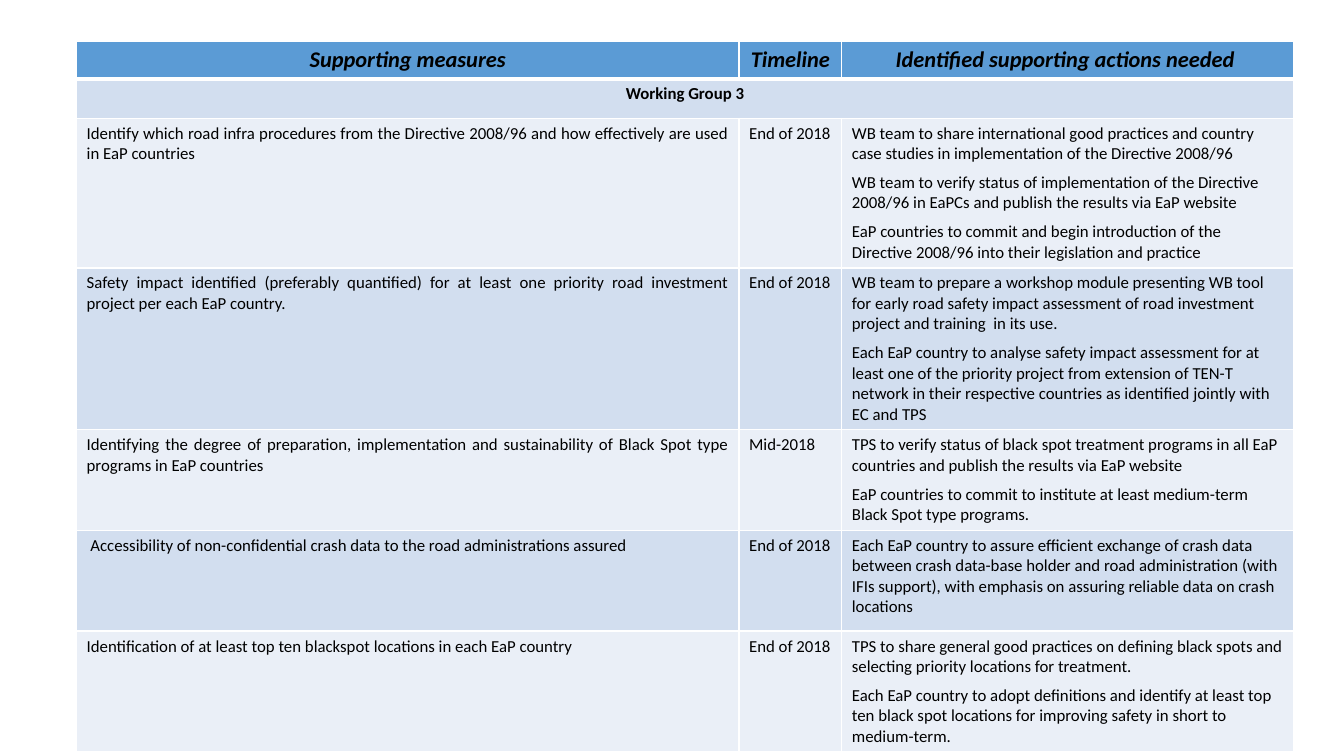
from lxml.etree import SubElement
from pptx import Presentation
from pptx.dml.color import RGBColor
from pptx.enum.text import PP_ALIGN
from pptx.oxml.ns import qn
from pptx.util import Inches, Pt

BLACK = RGBColor(0x00, 0x00, 0x00)
WHITE = RGBColor(0xFF, 0xFF, 0xFF)
BLUE = RGBColor(0x5B, 0x9B, 0xD5)
MID = RGBColor(0xD2, 0xDE, 0xEF)
PALE = RGBColor(0xEA, 0xEF, 0xF7)

LEFT, MID_ALIGN, FULL = PP_ALIGN.LEFT, PP_ALIGN.CENTER, PP_ALIGN.JUSTIFY

BASE = {"name": "Calibri", "size": Pt(12), "bold": False, "italic": False}
HEAD = {**BASE, "size": Pt(16), "bold": True, "italic": True}
GROUP = {**BASE, "bold": True}

WIDTHS = [6.57, 1.02, 4.48]
HEIGHTS = [0.36, 0.39, 1.44, 1.36, 0.97, 1, 1.2]
TITLES = ["Supporting measures", "Timeline", "Identified supporting actions needed "]

# Each row: measure, its alignment, timeline, actions
ROWS = [
    ("Identify which road infra procedures from the Directive 2008/96 and how "
     "effectively are used in EaP countries", FULL, "End of 2018", [
         "WB team to share international good practices and country case studies "
         "in implementation of the Directive 2008/96",
         "WB team to verify status of implementation of the Directive 2008/96 in "
         "EaPCs and publish the results via EaP website",
         "EaP countries to commit and begin introduction of the Directive 2008/96 "
         "into their legislation and practice"]),
    ("Safety impact identified (preferably quantified) for at least one priority "
     "road investment project per each EaP country.", FULL, "End of 2018", [
         "WB team to prepare a workshop module presenting WB tool for early road "
         "safety impact assessment of road investment project and training  in its use.",
         "Each EaP country to analyse safety impact assessment for at least one of "
         "the priority project from extension of TEN-T network in their respective "
         "countries as identified jointly with EC and TPS"]),
    ("Identifying the degree of preparation, implementation and sustainability of "
     "Black Spot type programs in EaP countries", FULL, "Mid-2018", [
         "TPS to verify status of black spot treatment programs in all EaP "
         "countries and publish the results via EaP website",
         "EaP countries to commit to institute at least medium-term Black Spot "
         "type programs."]),
    (" Accessibility of non-confidential crash data to the road administrations "
     "assured", FULL, "End of 2018", [
         "Each EaP country to assure efficient exchange of crash data between "
         "crash data-base holder and road administration (with IFIs support), "
         "with emphasis on assuring reliable data on crash locations"]),
    ("Identification of at least top ten blackspot locations in each EaP country",
     LEFT, "End of 2018", [
         "TPS to share general good practices on defining black spots and "
         "selecting priority locations for treatment.",
         "Each EaP country to adopt definitions and identify at least top ten "
         "black spot locations for improving safety in short to medium-term."]),
]


class Deck:
    """Holds the style and the current slide."""

    def __init__(self):
        self.show = Presentation()
        self.show.slide_width = Inches(13.33)
        self.show.slide_height = Inches(7.5)
        self.slide = self.show.slides.add_slide(self.show.slide_layouts[6])

    def table(self, left, top, widths, heights):
        frame = self.slide.shapes.add_table(
            len(heights), len(widths), Inches(left), Inches(top),
            Inches(sum(widths)), Inches(sum(heights)))
        grid = frame.table
        grid.first_row = grid.horz_banding = False
        for col, width in zip(grid.columns, widths):
            col.width = Inches(width)
        for row, height in zip(grid.rows, heights):
            row.height = Inches(height)
        return grid

    def cell(self, cell, fill, lines=(), align=LEFT, style=BASE, after=0, base=1):
        self.edges(cell, base)
        cell.fill.solid()
        cell.fill.fore_color.rgb = fill
        frame = cell.text_frame
        for num, line in enumerate(lines):
            para = frame.add_paragraph() if num else frame.paragraphs[0]
            para.alignment = align
            para.space_after = Pt(after)
            run = para.add_run()
            run.text = line
            for key, value in style.items():
                setattr(run.font, key, value)
            run.font.color.rgb = BLACK

    def edges(self, cell, base):
        props = cell._tc.get_or_add_tcPr()
        for side, width in zip("LRTB", (1, 1, 1, base)):
            line = SubElement(props, qn(f"a:ln{side}"), w=str(Pt(width)))
            fill = SubElement(line, qn("a:solidFill"))
            SubElement(fill, qn("a:srgbClr"), val=str(WHITE))

    def save(self):
        self.show.save("out.pptx")


def main():
    deck = Deck()
    grid = deck.table(0.76, 0.41, WIDTHS, HEIGHTS)

    # Header row
    for col, title in enumerate(TITLES):
        deck.cell(grid.cell(0, col), BLUE, [title], MID_ALIGN, HEAD, base=3)

    # Group row across all columns
    grid.cell(1, 0).merge(grid.cell(1, 2))
    for col, lines in enumerate((["Working Group 3"], [], [])):
        deck.cell(grid.cell(1, col), MID, lines, MID_ALIGN, GROUP)

    # Measures in alternating bands
    for row, (goal, align, due, acts) in enumerate(ROWS, 2):
        fill = MID if row % 2 else PALE
        deck.cell(grid.cell(row, 0), fill, [goal], align)
        deck.cell(grid.cell(row, 1), fill, [due])
        deck.cell(grid.cell(row, 2), fill, acts, after=6)

    deck.save()


if __name__ == "__main__":
    main()
